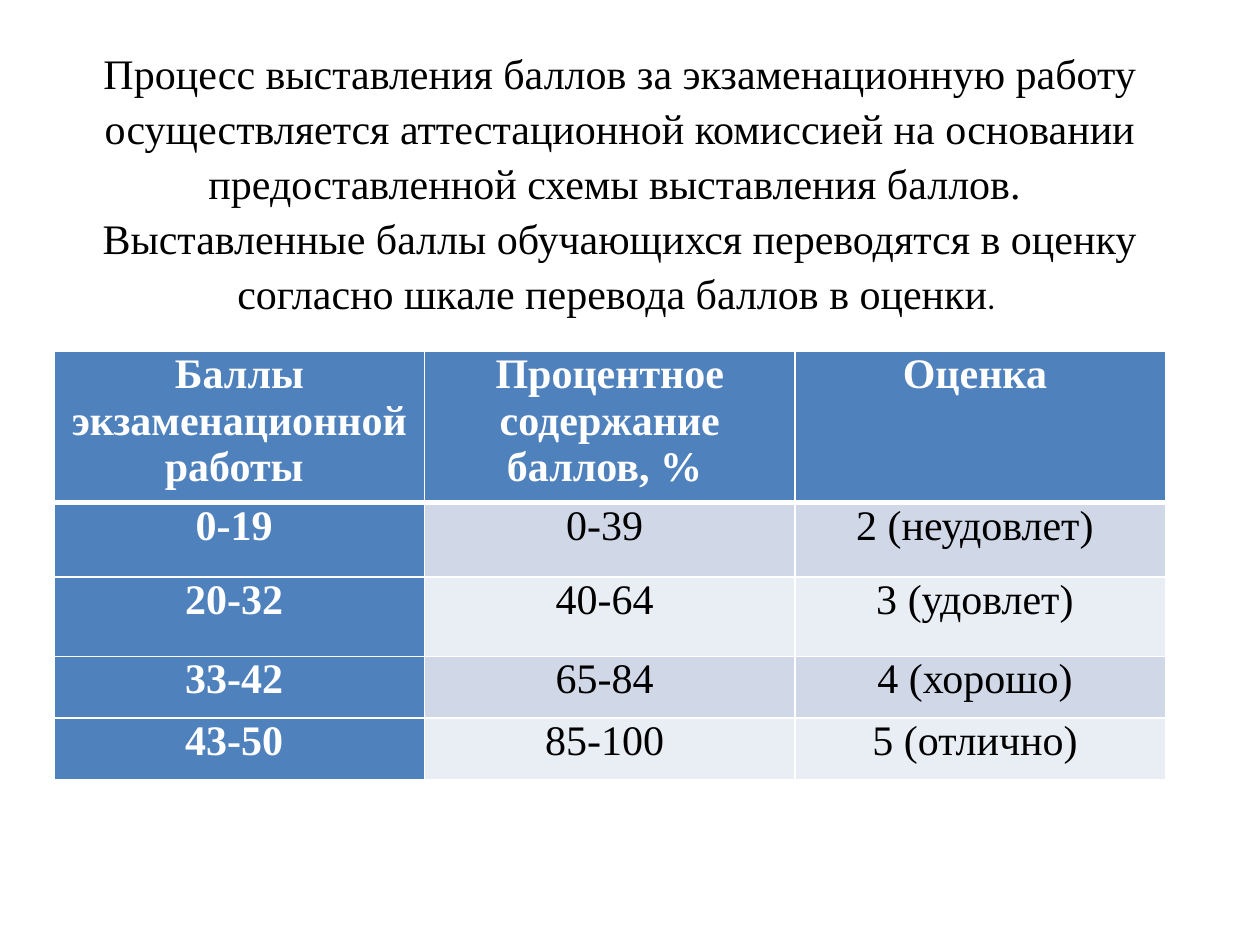
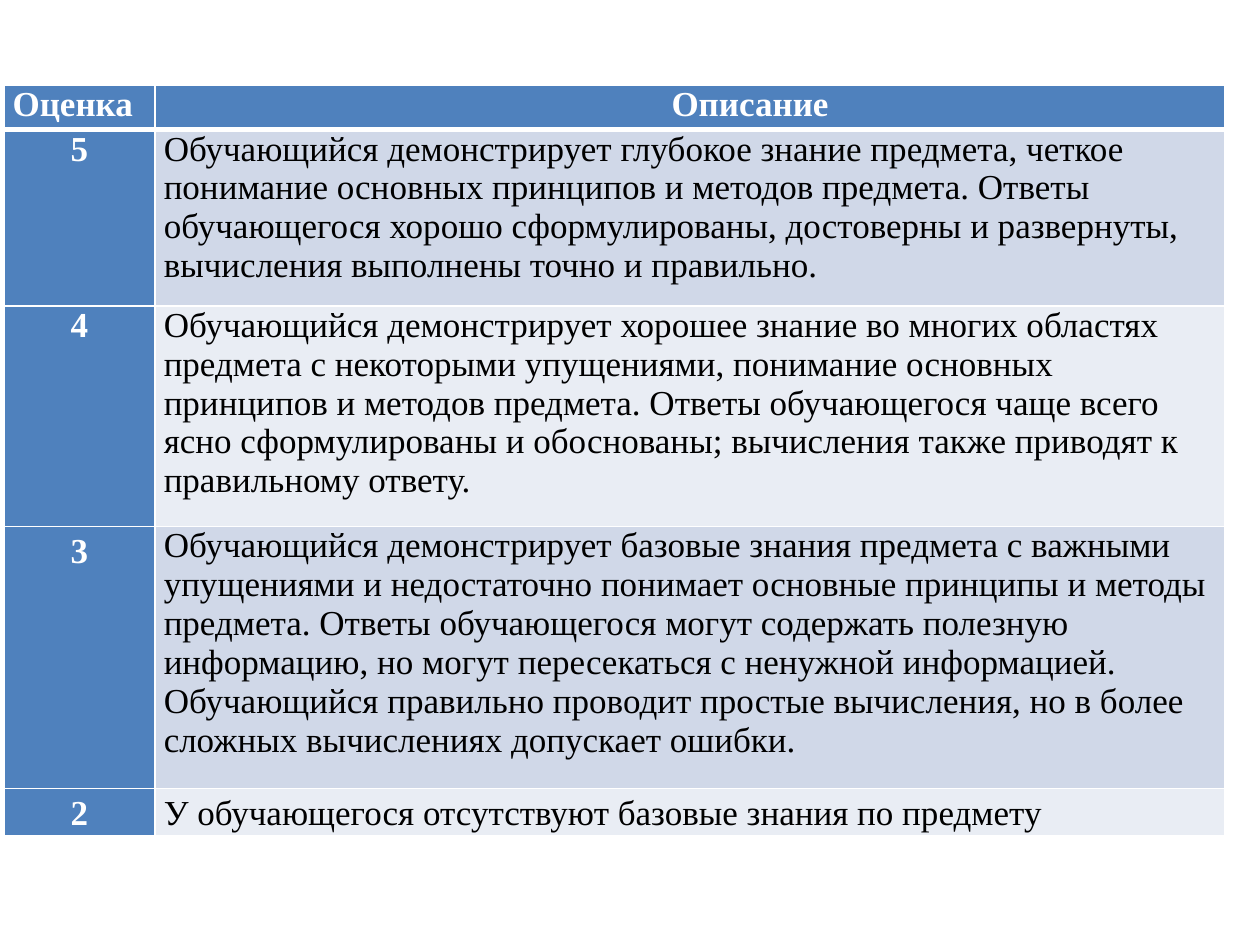
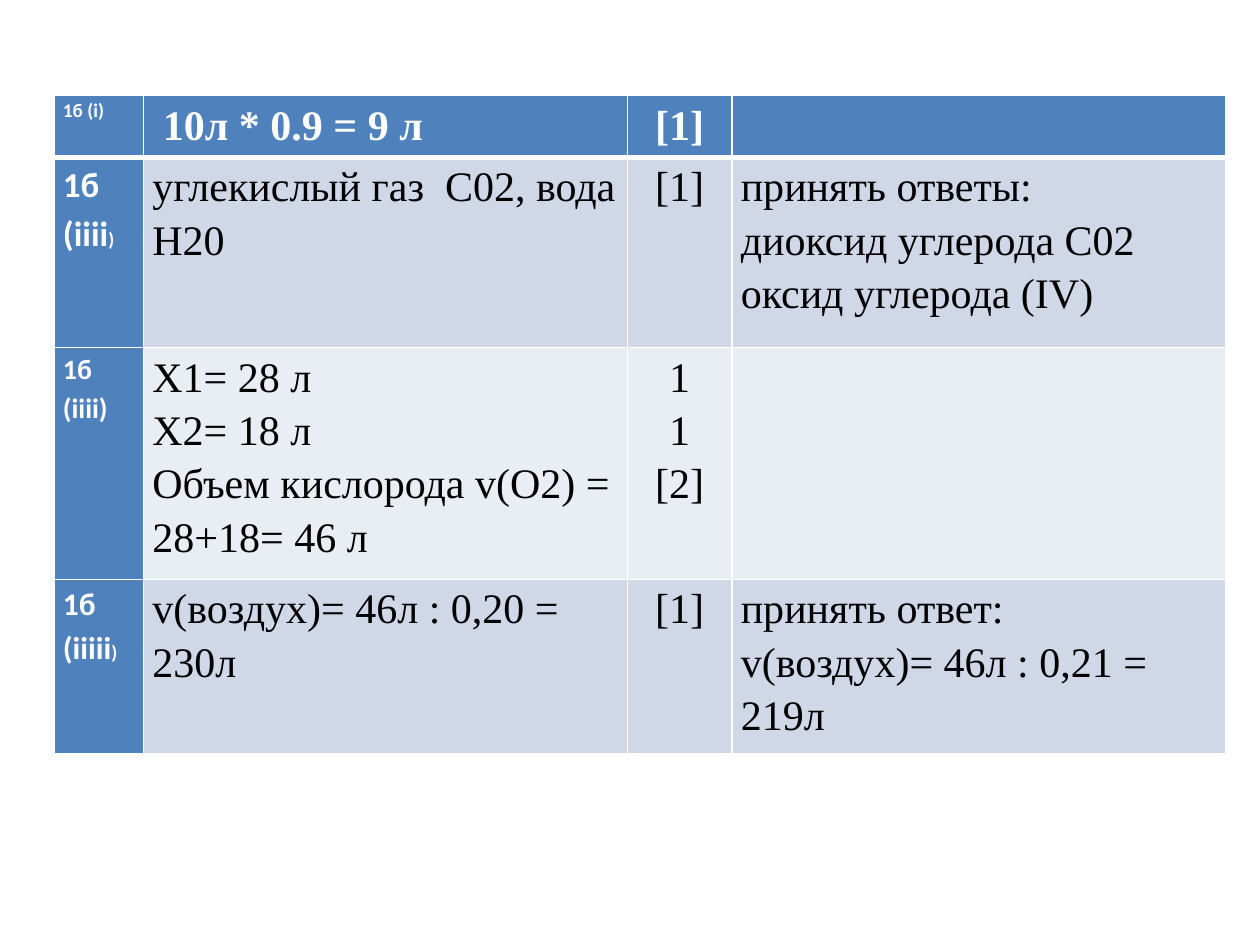
from lxml import etree
from pptx import Presentation
from pptx.dml.color import RGBColor
from pptx.enum.text import MSO_ANCHOR, MSO_AUTO_SIZE, PP_ALIGN
from pptx.oxml.ns import qn
from pptx.util import Inches, Pt

CENTER, LEFT = PP_ALIGN.CENTER, PP_ALIGN.LEFT
TOP, FIXED = MSO_ANCHOR.TOP, MSO_AUTO_SIZE.NONE
TITLE_ONLY, BLANK = 5, 6
COLS, ROWS = 100, 75
SERIF, SANS = "Times New Roman", "Calibri"
COLORS = {"head": "4F81BD", "odd": "D0D8E8", "even": "E9EDF4",
          "light": "FFFFFF", "dark": "000000"}

TITLE = [
    [("Процесс выставления баллов за экзаменационную работу осуществляется "
      "аттестационной комиссией на основании предоставленной схемы "
      "выставления баллов. ", {})],
    [("Выставленные баллы обучающихся переводятся в оценку согласно шкале "
      "перевода баллов в оценки", {}), (". ", {"size": 18, "name": SANS})],
]
SCALE = [
    ["Баллы экзаменационной работы ", "Процентное содержание баллов, % ",
     "Оценка "],
    ["0-19 ", "0-39 ", "2 (неудовлет) "],
    ["20-32 ", "40-64 ", "3 (удовлет) "],
    ["33-42 ", "65-84 ", "4 (хорошо) "],
    ["43-50 ", "85-100 ", "5 (отлично) "],
]
GRADES = [
    ["Оценка", "Описание"],
    ["5", "Обучающийся демонстрирует глубокое знание предмета, четкое "
          "понимание основных принципов и методов предмета. Ответы "
          "обучающегося хорошо сформулированы, достоверны и развернуты, "
          "вычисления выполнены точно и правильно."],
    ["4", "Обучающийся демонстрирует хорошее знание во многих областях "
          "предмета с некоторыми упущениями, понимание основных принципов и "
          "методов предмета. Ответы обучающегося чаще всего ясно "
          "сформулированы и обоснованы; вычисления также приводят к "
          "правильному ответу."],
    ["3", "Обучающийся демонстрирует базовые знания предмета с важными "
          "упущениями и недостаточно понимает основные принципы и методы "
          "предмета. Ответы обучающегося могут содержать полезную "
          "информацию, но могут пересекаться с ненужной информацией. "
          "Обучающийся правильно проводит простые вычисления, но в более "
          "сложных вычислениях допускает ошибки."],
    ["2", "У обучающегося отсутствуют базовые знания по предмету"],
]


def label(text, size, tail=None):
    """Return a row label, with an optional small closing run."""
    runs = [(text, {"size": size, "name": SANS})]
    return [runs + ([(tail, {"size": 11, "name": SANS})] if tail else [])]


ANSWERS = [
    [label("1б (і)", 11), " 10л * 0.9 = 9 л", "[1]", ""],
    [label("1б (іііі", 20, ")"), "углекислый газ  С02, вода Н20", "[1]",
     "принять ответы:\nдиоксид углерода С02\nоксид углерода (IV)"],
    [label("1б (іііі)", 16),
     "X1= 28 л\nХ2= 18 л\nОбъем кислорода v(O2) = 28+18= 46 л",
     "1\n1\n[2]", ""],
    [label("1б (ііііі", 18, ")"), "v(воздух)= 46л : 0,20 =  230л", "[1]",
     "принять ответ:\nv(воздух)= 46л : 0,21 =  219л"],
]


class Deck:
    """Holds the style, the presentation and the current slide."""

    def __init__(self):
        """Start an empty 10 by 7.5 inch presentation."""
        self.prs = Presentation()
        self.prs.slide_width, self.prs.slide_height = Inches(10), Inches(7.5)
        self.s = None

    def x(self, n):
        """Return the length of n grid columns."""
        return int(self.prs.slide_width * n / COLS)

    def y(self, n):
        """Return the length of n grid rows."""
        return int(self.prs.slide_height * n / ROWS)

    def slide(self, layout=BLANK):
        """Add a slide and make it current."""
        self.s = self.prs.slides.add_slide(self.prs.slide_layouts[layout])

    def text(self, tf, content, font, para):
        """Write paragraphs of runs, or plain lines, into a text frame."""
        if isinstance(content, str):
            content = [[(line, {})] for line in content.split("\n") if line]
        for i, runs in enumerate(content):
            p = tf.add_paragraph() if i else tf.paragraphs[0]
            for key, value in para.items():
                if key == "indent":
                    p._p.get_or_add_pPr().set("marL", str(self.x(value)))
                else:
                    setattr(p, key, value)
            for text, own in runs:
                r = p.add_run()
                r.text = text
                for key, value in {**font, **own}.items():
                    if key == "color":
                        r.font.color.rgb = RGBColor.from_string(COLORS[value])
                    else:
                        setattr(r.font, key, Pt(value) if key == "size" else value)

    def title(self, content, left, top, width, height):
        """Place and fill the title placeholder."""
        sp = self.s.shapes.title
        sp.left, sp.top = self.x(left), self.y(top)
        sp.width, sp.height = self.x(width), self.y(height)
        tf = sp.text_frame
        for key, value in {"word_wrap": True, "auto_size": FIXED,
                           "vertical_anchor": TOP}.items():
            setattr(tf, key, value)
        self.text(tf, content, {"size": 24, "name": SERIF, "color": "dark"},
                  {"alignment": CENTER, "line_spacing": 1.09})

    def borders(self, cell, row):
        """Draw white cell edges, thick under the header row."""
        tcPr = cell._tc.get_or_add_tcPr()
        thick = {"lnB": row == 0, "lnT": row == 1}
        for side in ("lnL", "lnR", "lnT", "lnB"):
            ln = etree.SubElement(tcPr, qn("a:" + side),
                                  w=str(Pt(3 if thick.get(side) else 1)))
            fill = etree.SubElement(ln, qn("a:solidFill"))
            etree.SubElement(fill, qn("a:srgbClr"), val=COLORS["light"])

    def table(self, data, left, top, widths, heights, size, para, special):
        """Add a table; special maps (row, column) to paragraph format."""
        tbl = self.s.shapes.add_table(
            len(heights), len(widths), self.x(left), self.y(top),
            self.x(sum(widths)), self.y(sum(heights))).table
        tbl.horz_banding, tbl.first_col = False, True
        for col, width in zip(tbl.columns, widths):
            col.width = self.x(width)
        for row, height in zip(tbl.rows, heights):
            row.height = self.y(height)
        for i, row in enumerate(data):
            for j, content in enumerate(row):
                cell = tbl.cell(i, j)
                head = i == 0 or j == 0
                for side, value in {"left": 0.7, "right": 0.7,
                                    "top": 0, "bottom": 0}.items():
                    setattr(cell, "margin_" + side, self.x(value))
                self.borders(cell, i)
                cell.fill.solid()
                shade = "head" if head else "odd" if i % 2 else "even"
                cell.fill.fore_color.rgb = RGBColor.from_string(COLORS[shade])
                font = {"size": size, "name": SERIF, "bold": head,
                        "color": "light" if head else "dark"}
                self.text(cell.text_frame, content, font,
                          {**para, **special.get((i, j), {})})


def main():
    """Build the three slides."""
    deck = Deck()
    centered, spaced = {"alignment": CENTER}, {"line_spacing": 1.15}

    deck.slide(TITLE_ONLY)
    deck.title(TITLE, 4.3, 2.9, 89.8, 21.2)
    deck.table(SCALE, 4.3, 27.9, [29.4] * 3, [12, 5.9, 6.3, 4.9, 4.9],
               24, centered, {})

    deck.slide()
    special = {(i, 0): centered for i in (1, 2)}
    special.update({(i, 0): {**centered, **spaced} for i in (3, 4)})
    special.update({(0, 1): {"indent": 40.3}, (4, 1): spaced})
    deck.table(GRADES, 0.3, 6.8, [12, 84.9], [3.5, 14, 17.5, 20.8, 3.7],
               20, {"alignment": LEFT}, special)

    deck.slide()
    deck.table(ANSWERS, 4.3, 7.6, [7.1, 38.4, 8.3, 39.2],
               [4.9, 15.1, 18.4, 13.8], 24, {"alignment": LEFT, **spaced},
               {(i, 2): centered for i in range(len(ANSWERS))})

    deck.prs.save("out.pptx")


if __name__ == "__main__":
    main()
